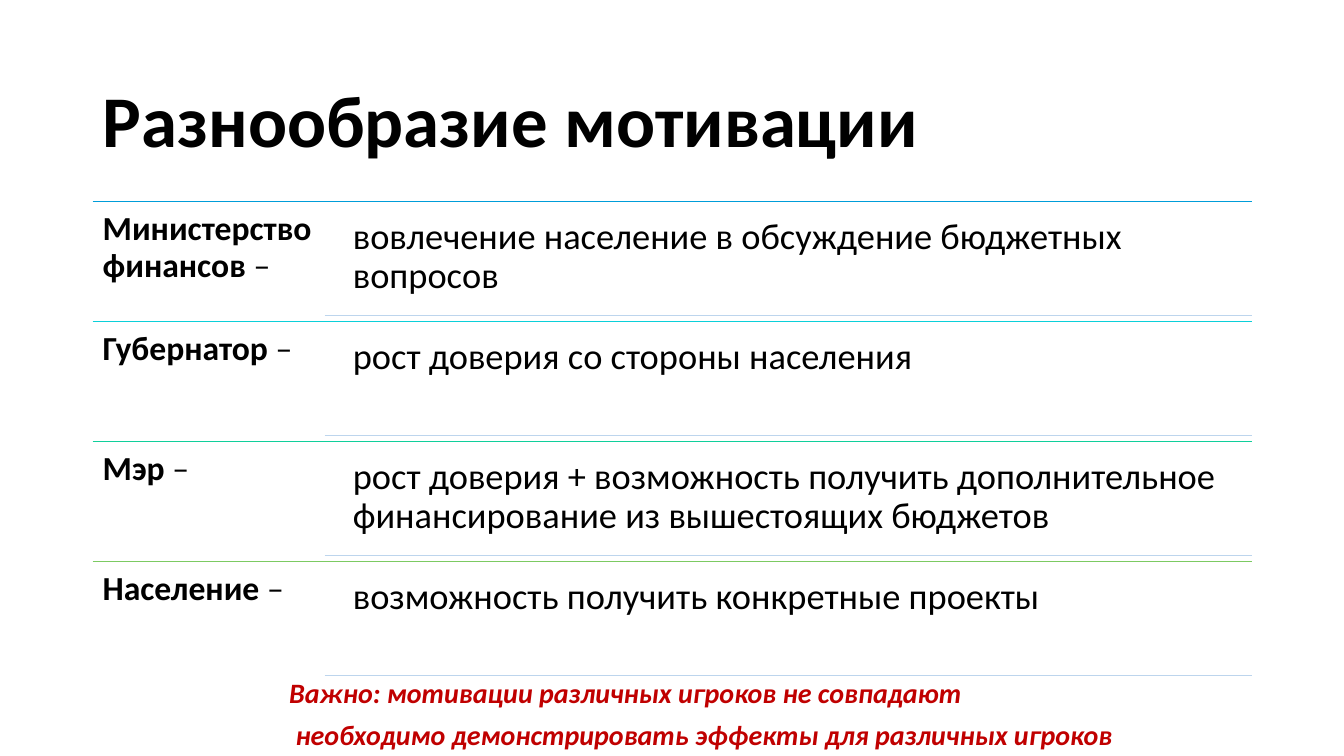
import pptx
import pptx.util
import pptx.dml.color
import pptx.enum.shapes
import pptx.enum.text
import pptx.oxml.ns
import lxml.etree

# Content
TITLE = "Разнообразие мотивации"
PLAYERS = [  # name, dash, motivation, rule colour
    ("Министерство финансов ", "–", "вовлечение население в обсуждение бюджетных вопросов", "009DD9"),
    ("Губернатор", " –", "рост доверия со стороны населения", "0BD0D9"),
    ("Мэр", " –", "рост доверия + возможность получить дополнительное "
     "финансирование из вышестоящих бюджетов", "10CF9B"),
    ("Население", " –", "возможность получить конкретные проекты", "7CCA62"),
]
NOTES = ["Важно: мотивации различных игроков не совпадают",
         " необходимо демонстрировать эффекты для различных игроков"]
FONT, BLACK, RED, PALE = "Calibri", "000000", "C00000", "BDD5ED"

# Grid in inches
LEFT, WIDTH, TOP, ROW = 0.92, 11.5, 2, 1.19
RIGHT = LEFT + WIDTH
NAME_W = WIDTH / 5
TEXT_X = LEFT + NAME_W + 0.17
TEXT_DY, TEXT_H = 0.05, 1.08

Inches, Pt = pptx.util.Inches, pptx.util.Pt
ANCHOR = pptx.enum.text.MSO_ANCHOR


def color(value):
    return pptx.dml.color.RGBColor.from_string(value)


def add_run(p, text, size, fill=BLACK, bold=False, italic=False):
    r = p.add_run()
    r.text = text
    r.font.name, r.font.size = FONT, Pt(size)
    r.font.bold, r.font.italic = bold, italic
    r.font.color.rgb = color(fill)


def add_line(s, x, y, fill):
    line = s.shapes.add_connector(pptx.enum.shapes.MSO_CONNECTOR.STRAIGHT,
                                  Inches(x), Inches(y), Inches(RIGHT), Inches(y))
    line.line.color.rgb = color(fill)
    line.line.width = Pt(1)
    lxml.etree.SubElement(line._element.spPr, pptx.oxml.ns.qn("a:effectLst"))


def add_cell(s, x, y, w, h, inset, size, runs):
    tf = s.shapes.add_textbox(Inches(x), Inches(y), Inches(w), Inches(h)).text_frame
    tf.word_wrap = True
    tf.vertical_anchor = ANCHOR.TOP
    tf.margin_left = tf.margin_right = tf.margin_top = tf.margin_bottom = Inches(inset)
    p = tf.paragraphs[0]
    p.line_spacing = 0.9
    for text, bold in runs:
        add_run(p, text, size, bold=bold)


def main():
    prs = pptx.Presentation()
    prs.slide_width, prs.slide_height = Inches(13.33), Inches(7.5)
    s = prs.slides.add_slide(prs.slide_layouts[5])

    # Title
    title = s.shapes.title
    title.left, title.top = Inches(LEFT), Inches(0.61)
    title.width, title.height = Inches(WIDTH), Inches(1.24)
    tf = title.text_frame
    tf.vertical_anchor = ANCHOR.MIDDLE
    p = tf.paragraphs[0]
    p.alignment = pptx.enum.text.PP_ALIGN.LEFT
    p.line_spacing = 0.9
    add_run(p, TITLE, 52, bold=True)

    # Closing remark
    tf = s.shapes.add_textbox(Inches(2.77), Inches(6.65), Inches(8.49), Inches(0.86)).text_frame
    tf.word_wrap = False
    tf.auto_size = pptx.enum.text.MSO_AUTO_SIZE.SHAPE_TO_FIT_TEXT
    for i, note in enumerate(NOTES):
        p = tf.add_paragraph() if i else tf.paragraphs[0]
        p.space_after = Pt(6)
        add_run(p, note, 20, RED, bold=True, italic=True)

    # Players and their motivations
    for i, (name, dash, motivation, fill) in enumerate(PLAYERS):
        y = TOP + i * ROW
        add_line(s, LEFT, y, fill)
        add_cell(s, LEFT, y, NAME_W, ROW, 0.1, 24, [(name, True), (dash, False)])
        add_cell(s, TEXT_X, y + TEXT_DY, RIGHT - TEXT_X, TEXT_H, 0.11, 26, [(motivation, False)])
        add_line(s, LEFT + NAME_W, y + TEXT_DY + TEXT_H, PALE)

    prs.save("out.pptx")


if __name__ == "__main__":
    main()
